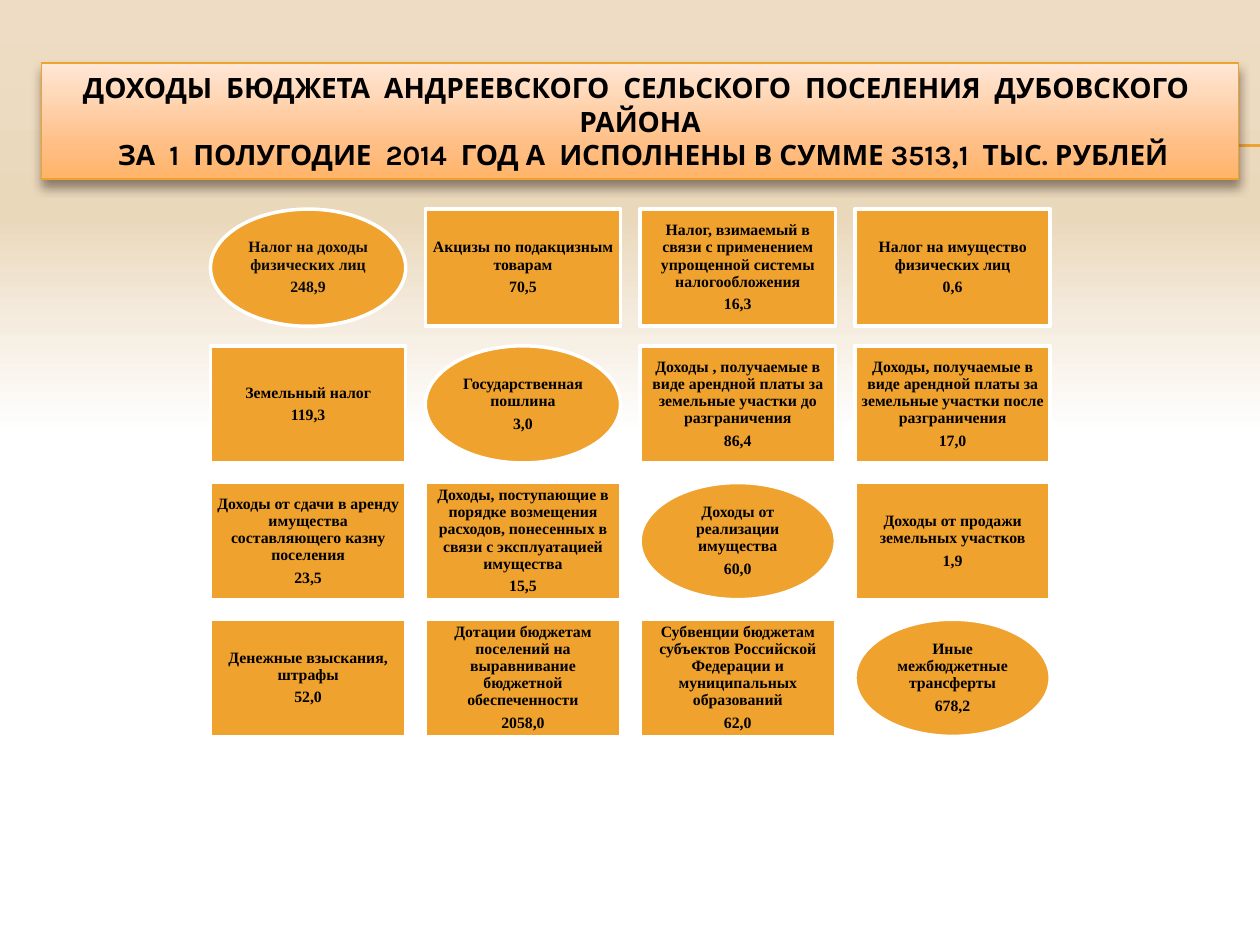
import lxml.etree
import pptx
import pptx.dml.color
import pptx.enum.shapes
import pptx.enum.text
import pptx.oxml.ns
import pptx.util

Inches = pptx.util.Inches
Pt = pptx.util.Pt
RGBColor = pptx.dml.color.RGBColor
Shape = pptx.enum.shapes.MSO_SHAPE
qn = pptx.oxml.ns.qn

ORANGE = RGBColor(0xF0, 0xA2, 0x2E)
WHITE = RGBColor(0xFF, 0xFF, 0xFF)
BLACK = RGBColor(0x00, 0x00, 0x00)
NEAR_BLACK = RGBColor(0x0D, 0x0D, 0x0D)
SHADOW = RGBColor(0x4E, 0x3B, 0x30)
SAND = RGBColor(0xEE, 0xDD, 0xC4)
DARK_SAND = RGBColor(0xEA, 0xD8, 0xBB)
PALE_SAND = RGBColor(0xF5, 0xEC, 0xDF)
TITLE_STOPS = [(0, RGBColor(0xFF, 0xE7, 0xD7)), (72, RGBColor(0xFF, 0xBE, 0x84)),
               (100, RGBColor(0xFF, 0xB4, 0x68))]
PAGE_STOPS = [(0, SAND), (23, DARK_SAND), (34, PALE_SAND), (46, WHITE), (100, WHITE)]

TITLE_LINES = [
    "ДОХОДЫ  БЮДЖЕТА  АНДРЕЕВСКОГО  СЕЛЬСКОГО  ПОСЕЛЕНИЯ  ДУБОВСКОГО  РАЙОНА",
    " ЗА  1  ПОЛУГОДИЕ  2014  ГОД А  ИСПОЛНЕНЫ В СУММЕ 3513,1  ТЫС. РУБЛЕЙ",
]

# Income cards, row by row
INCOME = [
    ("Налог на доходы физических лиц", "248,9"),
    ("Акцизы по подакцизным товарам", "70,5"),
    ("Налог, взимаемый в связи с применением упрощенной системы налогообложения", "16,3"),
    ("Налог на имущество физических лиц", "0,6"),
    ("Земельный налог", "119,3"),
    ("Государственная пошлина", "3,0"),
    ("Доходы , получаемые в виде арендной платы за земельные участки до разграничения", "86,4"),
    ("Доходы, получаемые в виде арендной платы за земельные участки после разграничения", "17,0"),
    ("Доходы от сдачи в аренду имущества составляющего казну поселения", "23,5"),
    ("Доходы, поступающие в порядке возмещения расходов, понесенных в связи с "
     "эксплуатацией имущества", "15,5"),
    ("Доходы от реализации имущества", "60,0"),
    ("Доходы от продажи земельных участков", "1,9"),
    ("Денежные взыскания, штрафы", "52,0"),
    ("Дотации бюджетам поселений на выравнивание бюджетной обеспеченности", "2058,0"),
    ("Субвенции бюджетам субъектов Российской Федерации и муниципальных образований", "62,0"),
    ("Иные межбюджетные трансферты", "678,2"),
]
COLUMNS = 4
GRID_LEFT, GRID_TOP = 1.67, 1.66
CARD_WIDTH, CARD_HEIGHT = 1.55, 0.93
GAP = CARD_WIDTH / 10


def set_gradient(fill, element, stops):
    """Fill downwards with (percent, colour) stops."""
    fill.gradient()
    fill.gradient_angle = 270
    stop_list = next(element.iter(qn("a:gsLst")))
    for old_stop in list(stop_list):
        stop_list.remove(old_stop)
    for percent, color in stops:
        stop = lxml.etree.SubElement(stop_list, qn("a:gs"), pos=str(percent * 1000))
        lxml.etree.SubElement(stop, qn("a:srgbClr"), val=str(color))


def add_shadow(shape):
    shape.shadow.inherit = False
    effects = shape.element.spPr.find(qn("a:effectLst"))
    outer = lxml.etree.SubElement(
        effects, qn("a:outerShdw"), blurRad=str(Pt(6)), dist=str(Pt(4)),
        dir="5400000", algn="t", rotWithShape="0")
    color = lxml.etree.SubElement(outer, qn("a:srgbClr"), val=str(SHADOW))
    lxml.etree.SubElement(color, qn("a:alpha"), val="60000")


def add_span(para, text, font, size, color):
    span = para.add_run()
    span.text = text
    span.font.name = font
    span.font.size = Pt(size)
    span.font.bold = True
    span.font.color.rgb = color


def add_box(page, kind, left, top, width, height, line_color, line_width):
    box = page.shapes.add_shape(kind, Inches(left), Inches(top), Inches(width), Inches(height))
    box.shadow.inherit = False
    box.line.color.rgb = line_color
    box.line.width = Pt(line_width)
    box.text_frame.word_wrap = True
    box.text_frame.vertical_anchor = pptx.enum.text.MSO_ANCHOR.MIDDLE
    return box


def add_rule(page, top):
    rule = page.shapes.add_connector(
        pptx.enum.shapes.MSO_CONNECTOR.STRAIGHT,
        Inches(0.56), Inches(top), Inches(10), Inches(top))
    rule.line.color.rgb = ORANGE
    rule.line.width = Pt(0.75)
    lxml.etree.SubElement(rule.element.spPr, qn("a:effectLst"))


def add_title(page):
    box = add_box(page, Shape.RECTANGLE, 0.33, 0.5, 9.5, 0.92, ORANGE, 0.79)
    set_gradient(box.fill, box.element, TITLE_STOPS)
    add_shadow(box)
    para = box.text_frame.paragraphs[0]
    para.alignment = pptx.enum.text.PP_ALIGN.CENTER
    for number, line in enumerate(TITLE_LINES):
        if number:
            para.add_line_break()
        add_span(para, line, "Karla", 16, BLACK)


def add_card(page, index, texts):
    row, column = divmod(index, COLUMNS)
    kind = Shape.OVAL if row == column else Shape.RECTANGLE
    box = add_box(page, kind, GRID_LEFT + column * (CARD_WIDTH + GAP),
                  GRID_TOP + row * (CARD_HEIGHT + GAP), CARD_WIDTH, CARD_HEIGHT, WHITE, 2)
    box.fill.solid()
    box.fill.fore_color.rgb = ORANGE
    frame = box.text_frame
    frame.margin_left = frame.margin_right = Inches(0.04)
    frame.margin_top = frame.margin_bottom = Inches(0.04)
    for number, text in enumerate(texts):
        para = frame.add_paragraph() if number else frame.paragraphs[0]
        para.alignment = pptx.enum.text.PP_ALIGN.CENTER
        para.line_spacing = 0.9
        para.space_after = Pt(3.15)
        add_span(para, text, "Times New Roman", 9, BLACK if index else NEAR_BLACK)


def main():
    deck = pptx.Presentation()
    deck.slide_width, deck.slide_height = Inches(10), Inches(7.5)
    page = deck.slides.add_slide(deck.slide_layouts[6])

    # Backdrop
    set_gradient(page.background.fill, page.element, PAGE_STOPS)
    for top in (1.15, 1.16):
        add_rule(page, top)

    # Title and cards
    add_title(page)
    for index, texts in enumerate(INCOME):
        add_card(page, index, texts)

    deck.save("out.pptx")


if __name__ == "__main__":
    main()
